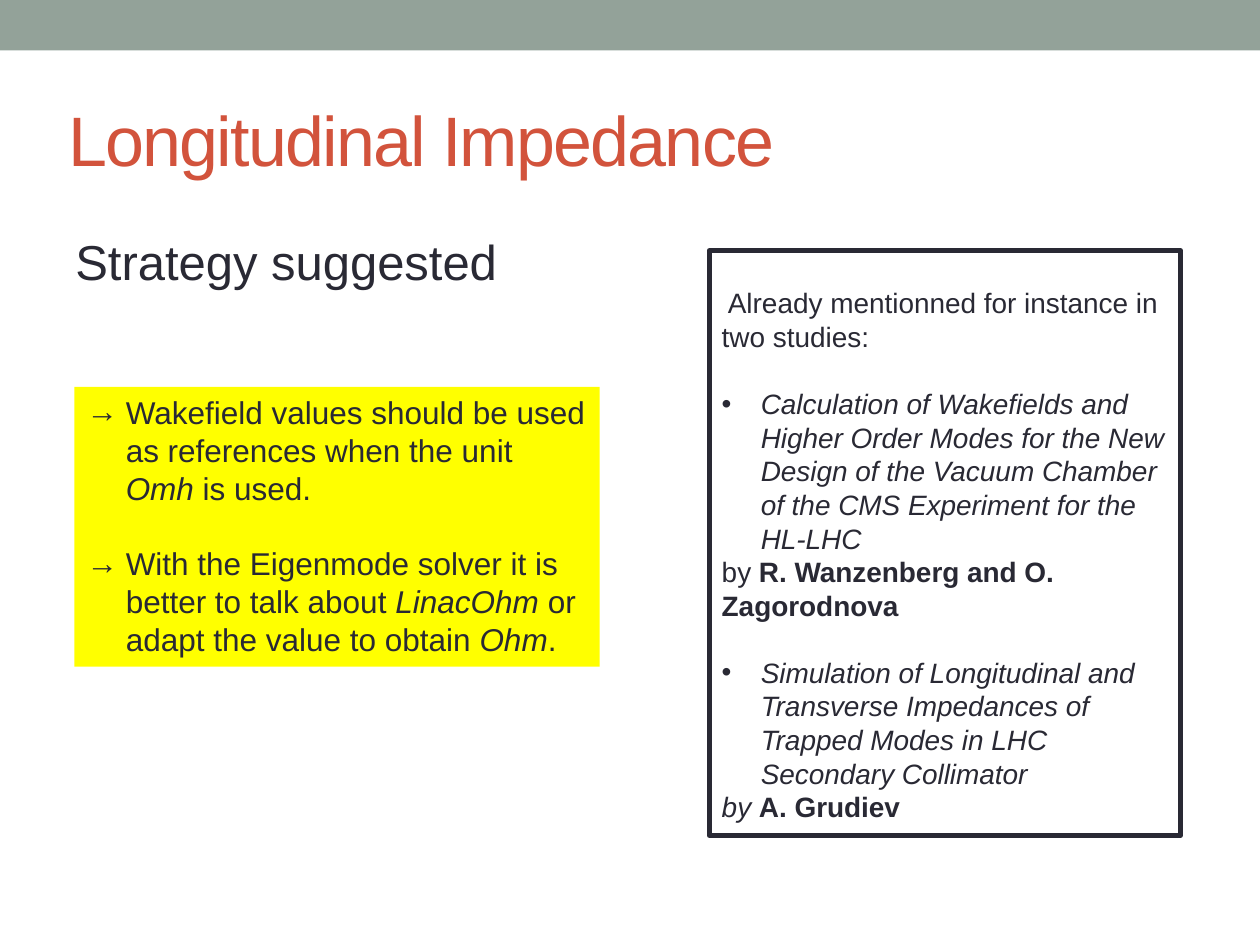
from lxml.etree import SubElement as Sub
from pptx import Presentation
from pptx.dml.color import RGBColor as RGB
from pptx.enum.shapes import MSO_SHAPE as Kind
from pptx.enum.text import MSO_ANCHOR as Anchor, PP_ALIGN as Align
from pptx.oxml.ns import qn
from pptx.util import Inches, Pt

DARK = "292934"

deck = Presentation()
deck.slide_width, deck.slide_height = Inches(10), Inches(7.5)
# The grid is 100 columns by 75 rows
unit = deck.slide_width / 100
slide = deck.slides.add_slide(deck.slide_layouts[5])
shapes = slide.shapes


def grid(*cells):
    return [round(cell * unit) for cell in cells]


def style(run, size, color=DARK, look=""):
    font = run.font
    font.name, font.size = "Arial", Pt(size)
    font.color.rgb = RGB.from_string(color)
    font.italic, font.bold = "i" in look, "b" in look


# Top band
band = shapes.add_shape(Kind.RECTANGLE, *grid(0, 0, 100, 4))
band.shadow.inherit = False
band.fill.solid()
band.fill.fore_color.rgb = RGB.from_string("93A299")
band.line.fill.background()

# Title and heading
title = shapes.title
title.left, title.top, title.width, title.height = grid(4.4, 5.6, 90, 10.8)
head = shapes.add_textbox(*grid(5, 17.9, 90, 5.8))
for box, text, size, color, anchor in (
    (title, "Longitudinal Impedance", 40, "D2533C", Anchor.MIDDLE),
    (head, "Strategy suggested", 28, DARK, Anchor.TOP),
):
    frame = box.text_frame
    frame.text, frame.word_wrap, frame.vertical_anchor = text, True, anchor
    line = frame.paragraphs[0]
    line.alignment = Align.LEFT
    style(line.runs[0], size, color)
title.text_frame.paragraphs[0].runs[0].font._element.set("spc", "-100")

# Paragraphs: bullet, gap above in lines, runs of (text, look)
advice = [
    ("→", 0, [("Wakefield values should be used as references when the unit ", ""),
              ("Omh ", "i"), ("is used.", "")]),
    ("→", 1, [("With the Eigenmode solver it is better to talk about ", ""),
              ("LinacOhm ", "i"), ("or adapt the value to obtain ", ""),
              ("Ohm", "i"), (".", "")]),
]
studies = [
    ("", 0, [(" Already mentionned for instance in two studies:", "")]),
    ("•", 1, [("Calculation of Wakefields and Higher Order Modes for the New Design "
               "of the Vacuum Chamber of the CMS Experiment for the HL-LHC", "i")]),
    ("", 0, [("by ", ""), ("R. Wanzenberg and O. Zagorodnova", "b")]),
    ("•", 1, [("Simulation of Longitudinal and Transverse Impedances of Trapped "
               "Modes in LHC Secondary Collimator", "i")]),
    ("", 0, [("by ", "i"), ("A. Grudiev", "b")]),
]

# Advice panel and studies panel
for cells, fill, edge, size, inset, items in (
    ((5.9, 30.7, 41.7, 22.2), "FFFF00", None, 18, 0.5, advice),
    ((56.3, 19.9, 37.4, 46.4), None, DARK, 16, 2.8, studies),
):
    panel = shapes.add_shape(Kind.RECTANGLE, *grid(*cells))
    panel.shadow.inherit = False
    if fill:
        panel.fill.solid()
        panel.fill.fore_color.rgb = RGB.from_string(fill)
    else:
        panel.fill.background()
    if edge:
        panel.line.color.rgb = RGB.from_string(edge)
        panel.line.width = Pt(3)
    else:
        panel.line.fill.background()
    frame = panel.text_frame
    frame.word_wrap, frame.vertical_anchor = True, Anchor.TOP
    frame.margin_top = grid(inset)[0]
    pitch = 1.2 * size
    for spot, (mark, gap, runs) in enumerate(items):
        line = frame.add_paragraph() if spot else frame.paragraphs[0]
        line.alignment = Align.LEFT
        line.line_spacing, line.space_before = Pt(pitch), Pt(gap * pitch)
        if mark:
            props = line._p.get_or_add_pPr()
            indent = grid(3.1)[0]
            props.set("marL", str(indent))
            props.set("indent", str(-indent))
            Sub(props, qn("a:buFont"), typeface="Arial")
            Sub(props, qn("a:buChar"), char=mark)
        for text, look in runs:
            run = line.add_run()
            run.text = text
            style(run, size, look=look)

deck.save("out.pptx")
